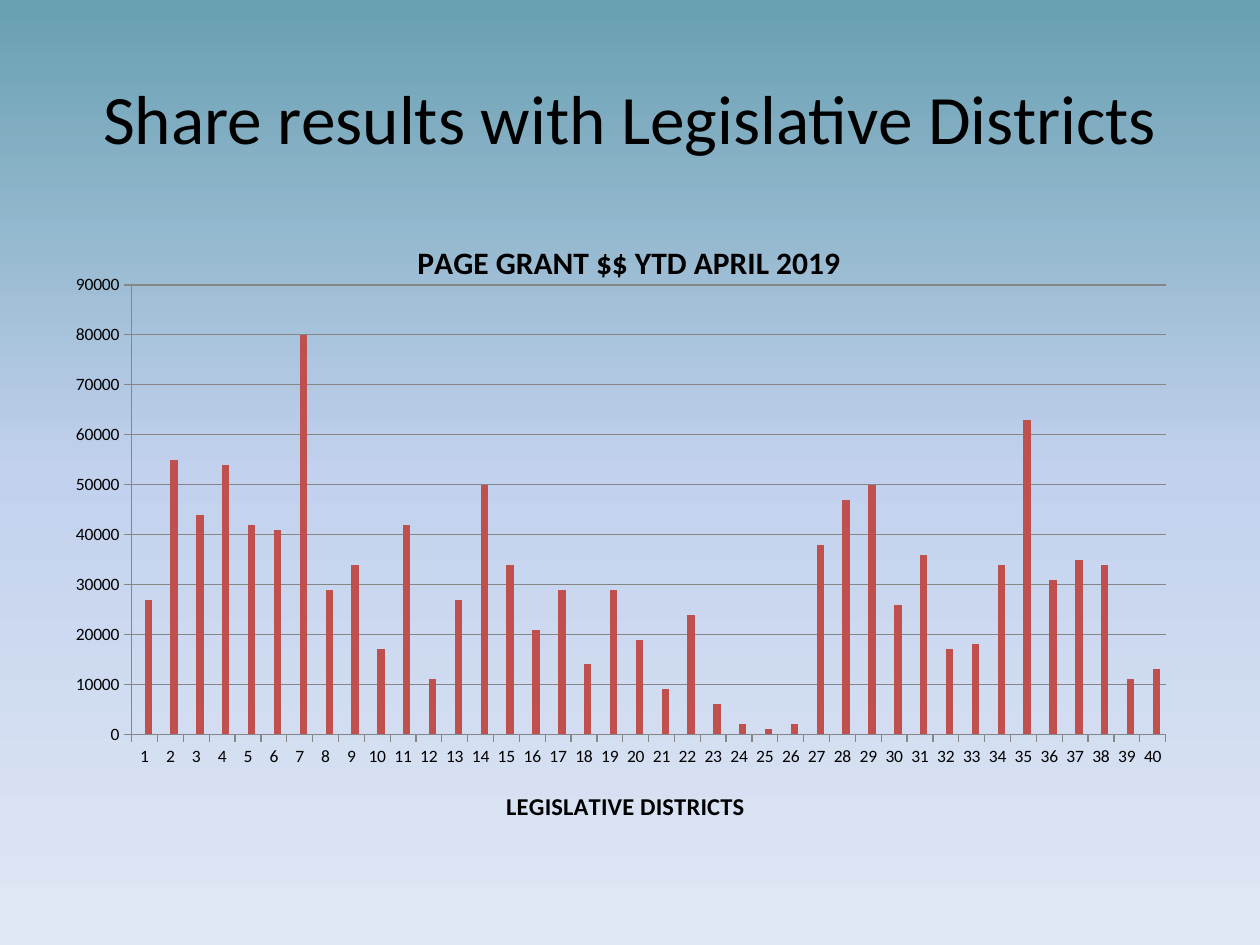
import copy
import pptx
import pptx.chart.data
import pptx.dml.color
import pptx.enum.chart
import pptx.enum.text
import pptx.oxml
import pptx.oxml.ns
import pptx.util

Pt = pptx.util.Pt
XL = pptx.enum.chart
COLORS = {
    "sky": "68A0B1", "mid": "C2D1ED", "base": "E1E8F5",
    "text": "000000", "blue": "4F81BD", "red": "C0504D", "line": "868686",
}
# Grant dollars in thousands, districts 1 to 40
GRANTS = [
    27, 55, 44, 54, 42, 41, 80, 29, 34, 17, 42, 11, 27, 50, 34, 21, 29, 14, 29, 19,
    9, 24, 6, 2, 1, 2, 38, 47, 50, 26, 36, 17, 18, 34, 63, 31, 35, 34, 11, 13,
]


def color(name):
    return pptx.dml.color.RGBColor.from_string(COLORS[name])


def style(font, size, bold=False):
    values = {"name": "Calibri", "size": Pt(size), "bold": bold}
    for key, value in values.items():
        setattr(font, key, value)
    font.color.rgb = color("text")


def place(part, **spots):
    """Give a chart part a manual layout, in fractions of the chart."""
    for old in part.findall(pptx.oxml.ns.qn("c:layout")):
        part.remove(old)
    target = '<c:layoutTarget val="inner"/>' if "w" in spots else ""
    modes = "".join(f'<c:{k}Mode val="edge"/>' for k in "xy")
    sizes = "".join(f'<c:{k} val="{v}"/>' for k, v in spots.items())
    layout = pptx.oxml.parse_xml(
        f'<c:layout {pptx.oxml.ns.nsdecls("c")}><c:manualLayout>'
        f"{target}{modes}{sizes}</c:manualLayout></c:layout>")
    text = part.find(pptx.oxml.ns.qn("c:tx"))
    part.insert(0 if text is None else 1, layout)


def label(title, text, size, x, y):
    frame = title.text_frame
    frame.text = text
    style(frame.paragraphs[0].runs[0].font, size, True)
    place(title._element, x=x, y=y)


def paint(slide):
    fill = slide.background.fill
    fill.gradient()
    fill.gradient_angle = 270
    stops = slide.element.xpath(".//a:gsLst")[0]
    stops.insert(1, copy.deepcopy(stops[0]))
    for stop, name, spot in zip(fill.gradient_stops, ("sky", "mid", "base"), (0, 0.5, 1)):
        stop.color.rgb = color(name)
        stop.position = spot


def head(slide, left, top, width, height):
    frame = slide.shapes.add_textbox(left, top, width, height).text_frame
    frame.word_wrap = True
    frame.vertical_anchor = pptx.enum.text.MSO_ANCHOR.MIDDLE
    para = frame.paragraphs[0]
    para.alignment = pptx.enum.text.PP_ALIGN.CENTER
    run = para.add_run()
    run.text = "Share results with Legislative Districts"
    style(run.font, 39.6)


def graph(slide, left, top, width, height):
    data = pptx.chart.data.CategoryChartData()
    data.categories = [str(n + 1) for n in range(len(GRANTS))]
    data.add_series("Series 1", [0] * len(GRANTS))
    data.add_series("Series 2", [n * 1000 for n in GRANTS])
    chart = slide.shapes.add_chart(
        XL.XL_CHART_TYPE.COLUMN_CLUSTERED, left, top, width, height, data).chart
    style(chart.font, 10)
    chart.has_legend = False
    label(chart.chart_title, "PAGE GRANT $$ YTD APRIL 2019", 18, 0.31, 0.04)
    chart.chart_title.include_in_layout = False

    # Bars
    plot = chart.plots[0]
    for key, value in {"gap_width": 150, "overlap": 0, "vary_by_categories": False}.items():
        setattr(plot, key, value)
    for series, name in zip(plot.series, ("blue", "red")):
        series.format.fill.solid()
        series.format.fill.fore_color.rgb = color(name)
    place(chart._chartSpace.chart.plotArea, x=0.061, y=0.122, w=0.919, h=0.736)

    # Axes
    across, up = chart.category_axis, chart.value_axis
    for key, value in {"minimum_scale": 0, "maximum_scale": 90000, "major_unit": 10000,
                       "has_major_gridlines": True}.items():
        setattr(up, key, value)
    for axis in (across, up):
        axis.major_tick_mark = XL.XL_TICK_MARK.OUTSIDE
        style(axis.tick_labels.font, 10)
    for part in (across, up, up.major_gridlines):
        part.format.line.color.rgb = color("line")
        part.format.line.width = Pt(0.75)
    label(across.axis_title, "LEGISLATIVE DISTRICTS", 14, 0.39, 0.94)


def main():
    deck = pptx.Presentation()
    deck.slide_width, deck.slide_height = Pt(720), Pt(540)
    slide = deck.slides.add_slide(deck.slide_layouts[6])
    paint(slide)
    head(slide, Pt(36), Pt(21.6), Pt(648), Pt(90))
    graph(slide, Pt(36), Pt(120.24), Pt(642.96), Pt(353.52))
    deck.save("out.pptx")


if __name__ == "__main__":
    main()
